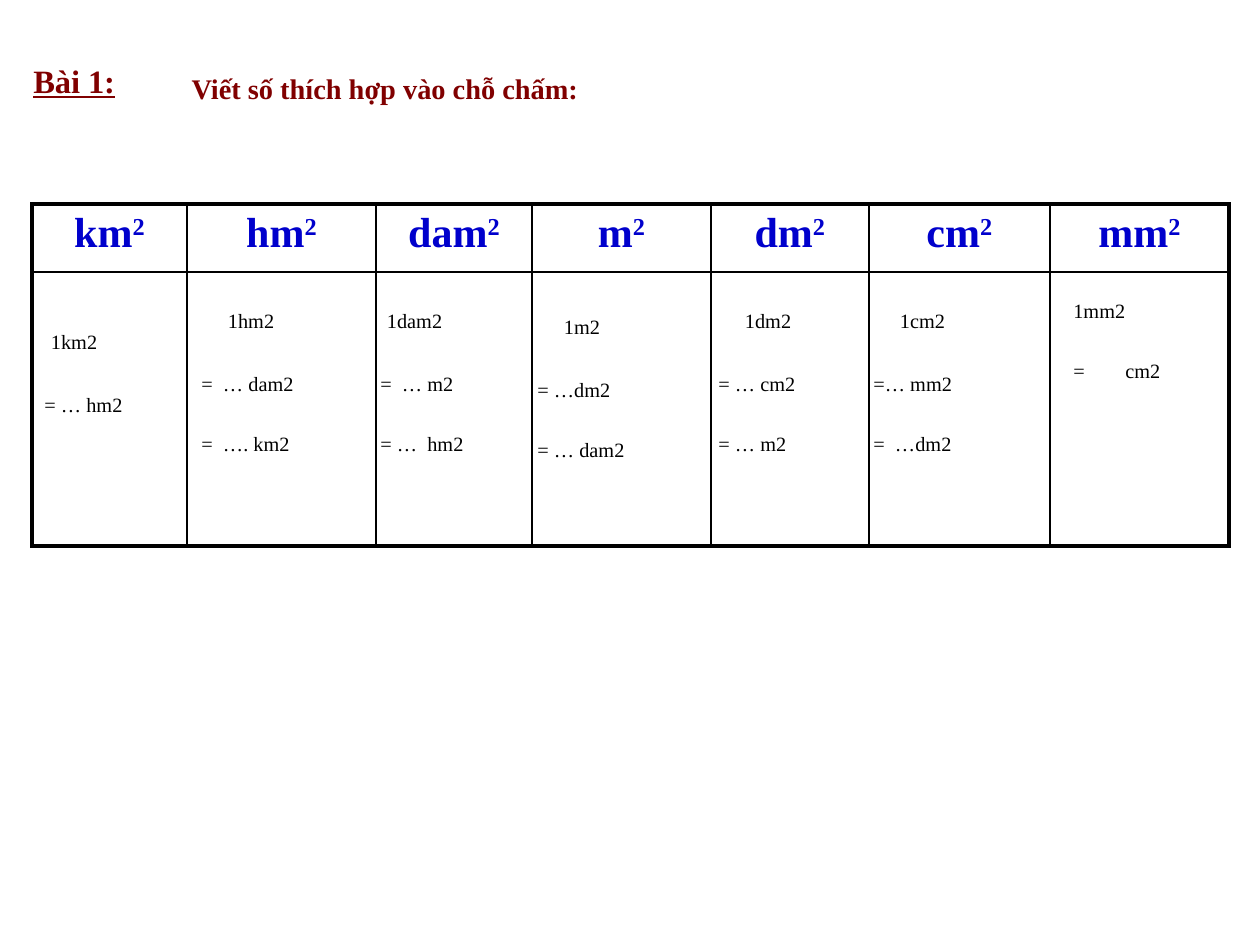
from pptx import Presentation
from pptx.dml.color import RGBColor
from pptx.enum.text import MSO_ANCHOR, MSO_AUTO_SIZE as AutoSize, PP_ALIGN as Align
from pptx.oxml.ns import qn
from pptx.util import Pt
from lxml.etree import SubElement

SCALE = 914400 / 126
COLORS = {"heading": "800000", "unit": "0000CC", "text": "000000"}


def px(length):
    """Turn a length in px into EMU."""
    return round(length * SCALE)


class UnitSlide:
    """Hold the style and the current slide, and add its elements."""

    font_name = "Times New Roman"
    raised = "20000"
    superscript = "30000"
    thick, thin = 2.25, 1

    def __init__(self, presentation):
        """Add a slide with only a title."""
        self.slide = presentation.slides.add_slide(presentation.slide_layouts[5])

    def format_run(self, run, size, color, bold=False, baseline=None):
        """Give a run its font, size, colour and baseline."""
        font = run.font
        font.name = self.font_name
        font.size = Pt(size)
        font.bold = bold
        font.color.rgb = RGBColor.from_string(COLORS[color])
        if baseline:
            run.font._element.set("baseline", baseline)

    def place(self, shape, left, top, width, height):
        """Place a text shape and set up its frame."""
        shape.left, shape.top = px(left), px(top)
        shape.width, shape.height = px(width), px(height)
        frame = shape.text_frame
        frame.word_wrap = True
        frame.auto_size = AutoSize.SHAPE_TO_FIT_TEXT
        frame.vertical_anchor = MSO_ANCHOR.TOP
        return frame

    def heading(self, shape, text, box, size, underline=False):
        """Write a bold heading into a shape."""
        frame = self.place(shape, *box)
        frame.text = text
        paragraph = frame.paragraphs[0]
        paragraph.alignment = Align.LEFT
        run = paragraph.runs[0]
        self.format_run(run, size, "heading", True, self.raised)
        run.font.underline = underline

    def title(self, text, box, size):
        """Fill the title placeholder."""
        self.heading(self.slide.shapes.title, text, box, size)

    def label(self, text, box, size):
        """Add an underlined heading beside the title."""
        self.heading(self.slide.shapes.add_textbox(0, 0, 0, 0), text, box, size, True)

    def conversions(self, lines, box, indent=None, tab=None):
        """Add a list of conversions, its first line indented if asked."""
        frame = self.place(self.slide.shapes.add_textbox(0, 0, 0, 0), *box)
        for index, line in enumerate(lines):
            paragraph = frame.add_paragraph() if index else frame.paragraphs[0]
            if index:
                paragraph.space_before = Pt(10.5)
            elif indent is not None:
                paragraph._p.get_or_add_pPr().set("indent", str(px(indent)))
                space = paragraph.add_run()
                space.text = " "
                self.format_run(space, 26, "text", baseline=self.raised)
            if tab and "\t" in line:
                stops = SubElement(paragraph._p.get_or_add_pPr(), qn("a:tabLst"))
                SubElement(stops, qn("a:tab"), pos=str(px(tab)), algn="l")
            run = paragraph.add_run()
            run.text = line
            self.format_run(run, 20, "text", baseline=self.raised)

    def border(self, cell, sides):
        """Draw the borders of a cell from widths by side."""
        properties = cell._tc.get_or_add_tcPr()
        for side, width in sides.items():
            line = SubElement(properties, qn(f"a:ln{side}"), w=str(Pt(width)))
            fill = SubElement(line, qn("a:solidFill"))
            SubElement(fill, qn("a:srgbClr"), val=COLORS["text"])

    def unit_table(self, units, left, top, widths, heights):
        """Add the table with a row of units above an empty row."""
        frame = self.slide.shapes.add_table(
            len(heights), len(units), px(left), px(top), px(sum(widths)), px(sum(heights)))
        table = frame.table
        table.first_row = table.horz_banding = False
        for column, width in zip(table.columns, widths):
            column.width = px(width)
        last_row, last_column = len(heights) - 1, len(units) - 1
        for row, height in enumerate(heights):
            table.rows[row].height = px(height)
            for column, unit in enumerate(units):
                cell = table.cell(row, column)
                edges = {"L": column == 0, "R": column == last_column,
                         "T": row == 0, "B": row == last_row}
                self.border(cell, {side: self.thick if outer else self.thin
                                   for side, outer in edges.items()})
                cell.fill.background()
                if row == 0:
                    self.unit(cell.text_frame.paragraphs[0], unit)

    def unit(self, paragraph, name):
        """Write a unit with its raised square."""
        paragraph.alignment = Align.CENTER
        for text, baseline in ((name, None), ("2", self.superscript)):
            run = paragraph.add_run()
            run.text = text
            self.format_run(run, 24, "unit", True, baseline)


def main():
    """Build the slide and save it."""
    presentation = Presentation()
    presentation.slide_width, presentation.slide_height = px(1260), px(945)
    page = UnitSlide(presentation)
    page.unit_table(["km", "hm", "dam", "m", "dm", "cm", "mm"], 32, 204,
                    [155, 189, 156, 179, 158, 181, 179], [68, 274])
    columns = [
        (["1km2", "= … hm2"], (32, 305, 168, 130), 0),
        (["1hm2", "=  … dam2", "=  …. km2"], (189, 284, 189, 193), 20),
        (["1dam2", "=  … m2", "= …  hm2"], (368, 284, 179, 193), 0),
        (["1m2", "= …dm2", "= … dam2"], (525, 290, 179, 193), 20),
        (["1dm2", "= … cm2", "= … m2"], (706, 284, 179, 193), 20),
        (["1cm2", "=… mm2", "=  …dm2"], (861, 284, 179, 193), 20),
    ]
    for lines, box, indent in columns:
        page.conversions(lines, box, indent)
    page.conversions(["1mm2", "=\tcm2"], (1061, 284, 179, 117), tab=52)
    page.label("Bài 1:", (21, 42, 242, 79), 32)
    page.title("Viết số thích hợp vào chỗ chấm:", (179, 54, 777, 72), 28)
    presentation.save("out.pptx")


if __name__ == "__main__":
    main()
